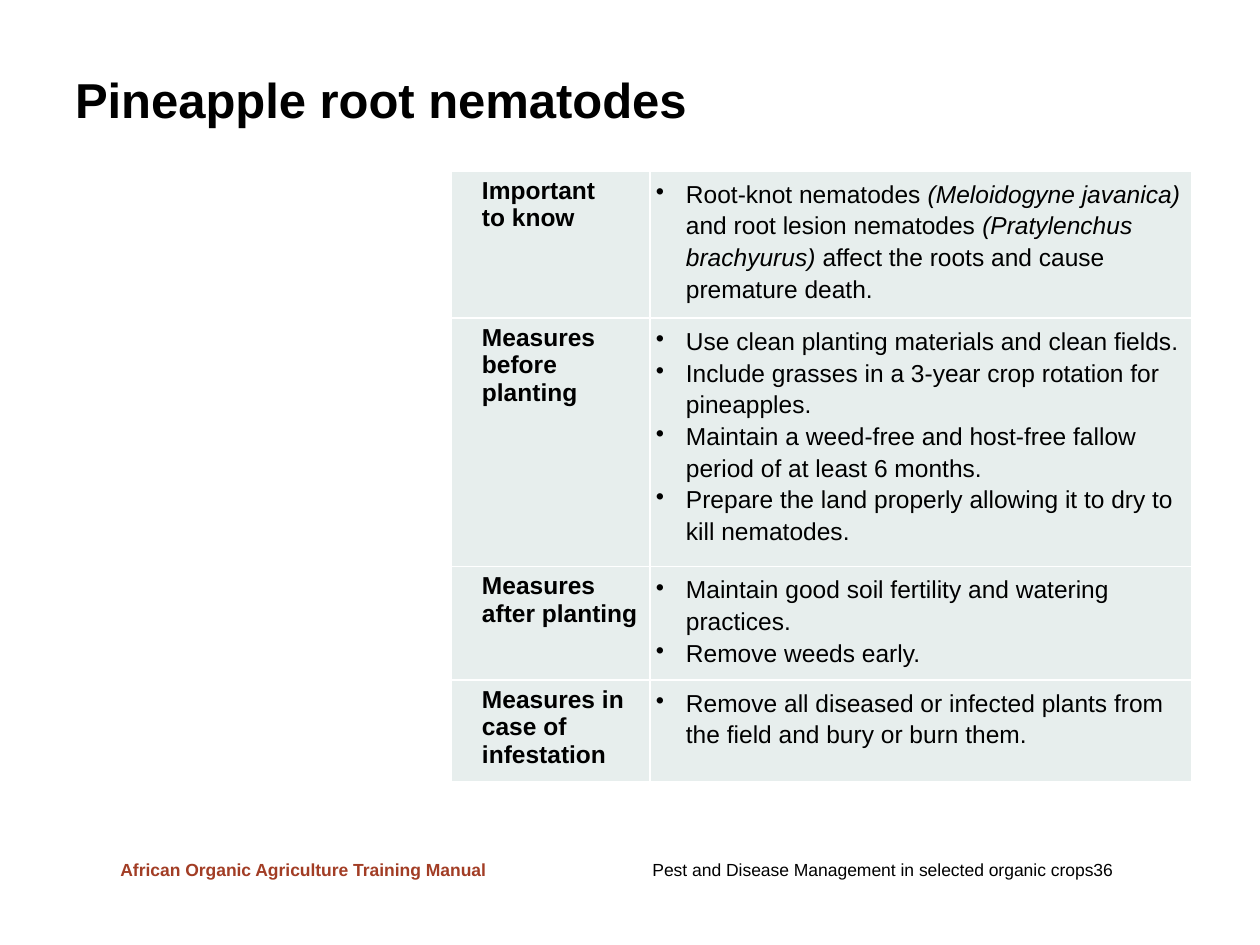
import pptx
import pptx.dml.color
import pptx.enum.text
import pptx.oxml
import pptx.oxml.ns
import pptx.util

EMU_PER_PX = 914400 / 126
FONT = "Arial"
COLORS = {"text": "000000", "manual": "A23D25", "cell": "E7EEED", "border": "FFFFFF"}
COLUMN_WIDTHS = [199, 542]
ROW_HEIGHTS = [138, 234, 108, 102]
PRACTICES = [
    ("Important \nto know", [
        "Root-knot nematodes *(Meloidogyne javanica) *and root lesion nematodes"
        "* (Pratylenchus brachyurus) *affect the roots and cause premature death.",
    ]),
    ("Measures \nbefore planting", [
        "Use clean planting materials and clean fields.",
        "Include grasses in a 3-year crop rotation for pineapples.",
        "Maintain a weed-free and host-free fallow period of at least 6 months.",
        "Prepare the land properly allowing it to dry to kill nematodes.",
    ]),
    ("Measures \nafter planting", [
        "Maintain good soil fertility and watering practices.",
        "Remove weeds early.",
    ]),
    ("Measures in case of infestation", [
        "Remove all diseased or infected plants from the field and bury or burn them.",
    ]),
]


def px(length):
    """Turn slide pixels into EMU."""
    return pptx.util.Emu(round(length * EMU_PER_PX))


def rgb(name):
    """Look up a named colour."""
    return pptx.dml.color.RGBColor.from_string(COLORS[name])


def append_xml(parent, markup):
    """Append a drawing element given as markup without its namespace."""
    tag, rest = markup.split(" ", 1)
    namespace = pptx.oxml.ns.nsdecls("a")
    parent.append(pptx.oxml.parse_xml(f"<a:{tag} {namespace} {rest}"))


def write_text(frame, paragraphs, size=14, color="text", bold=False, margin=0,
               bullet=None, right_tab=None, line_spacing=None, space_after=None):
    """Write paragraphs, with italics between asterisks, in one format."""
    for index, content in enumerate(paragraphs):
        paragraph = frame.paragraphs[0] if index == 0 else frame.add_paragraph()
        properties = paragraph._p.get_or_add_pPr()
        properties.set("marL", str(px(margin)))
        properties.set("indent", str(px(-margin if bullet else 0)))
        if bullet:
            append_xml(properties, f'buChar char="{bullet}"/>')
        if right_tab:
            append_xml(properties, f'tabLst ><a:tab pos="{px(right_tab)}" algn="r"/></a:tabLst>')
        paragraph.alignment = pptx.enum.text.PP_ALIGN.LEFT
        paragraph.line_spacing = line_spacing
        paragraph.space_after = space_after
        for part, passage in enumerate(content.split("*")):
            for line_number, line in enumerate(passage.split("\n")):
                if line_number:
                    paragraph.add_line_break()
                run = paragraph.add_run()
                run.text = line
                run.font.name = FONT
                run.font.size = pptx.util.Pt(size)
                run.font.bold = bold
                run.font.italic = part % 2 == 1
                run.font.color.rgb = rgb(color)


def add_title(slide, heading):
    """Place and fill the title placeholder."""
    title = slide.shapes.title
    title.left, title.top, title.width, title.height = px(75), px(50), px(1117), px(103)
    frame = title.text_frame
    frame.margin_left = frame.margin_top = 0
    frame.margin_right, frame.margin_bottom = px(13), px(6)
    frame.vertical_anchor = pptx.enum.text.MSO_ANCHOR.MIDDLE
    frame.auto_size = pptx.enum.text.MSO_AUTO_SIZE.NONE
    write_text(frame, [heading], size=28, bold=True)


def add_footer(slide, content, left, width, **text_format):
    """Add one line of text in the footer band."""
    frame = slide.shapes.add_textbox(px(left), px(853), px(width), px(34)).text_frame
    frame.word_wrap = True
    frame.vertical_anchor = pptx.enum.text.MSO_ANCHOR.MIDDLE
    write_text(frame, [content], size=10, **text_format)


def format_cell(cell):
    """Give a cell its margins, borders and fill."""
    cell.margin_left = cell.margin_right = cell.margin_top = cell.margin_bottom = px(6)
    properties = cell._tc.get_or_add_tcPr()
    for side in "LRTB":
        append_xml(properties, f'ln{side} w="{pptx.util.Pt(1)}"><a:solidFill>'
                   f'<a:srgbClr val="{COLORS["border"]}"/></a:solidFill></a:ln{side}>')
    cell.fill.solid()
    cell.fill.fore_color.rgb = rgb("cell")


def add_practices(slide):
    """Add the table of facts and control measures."""
    table = slide.shapes.add_table(
        len(PRACTICES), len(COLUMN_WIDTHS), px(451), px(171),
        px(sum(COLUMN_WIDTHS)), px(sum(ROW_HEIGHTS))).table
    table.first_row = table.horz_banding = False
    for column, width in zip(table.columns, COLUMN_WIDTHS):
        column.width = px(width)
    for row, height, (stage, measures) in zip(table.rows, ROW_HEIGHTS, PRACTICES):
        row.height = px(height)
        stage_cell, measures_cell = row.cells
        format_cell(stage_cell)
        format_cell(measures_cell)
        write_text(stage_cell.text_frame, [stage], bold=True, margin=25,
                   space_after=pptx.util.Pt(3))
        write_text(measures_cell.text_frame, measures, margin=30, bullet="•",
                   line_spacing=1.15)


def main():
    """Build and save the slide."""
    presentation = pptx.Presentation()
    presentation.slide_width, presentation.slide_height = px(1260), px(945)
    slide = presentation.slides.add_slide(presentation.slide_layouts[5])
    add_footer(slide, "Pest and Disease Management in selected organic crops\t36",
               640, 610, right_tab=538)
    add_footer(slide, "African Organic Agriculture Training Manual",
               108, 396, color="manual", bold=True)
    add_title(slide, "Pineapple root nematodes")
    add_practices(slide)
    presentation.save("out.pptx")


if __name__ == "__main__":
    main()
